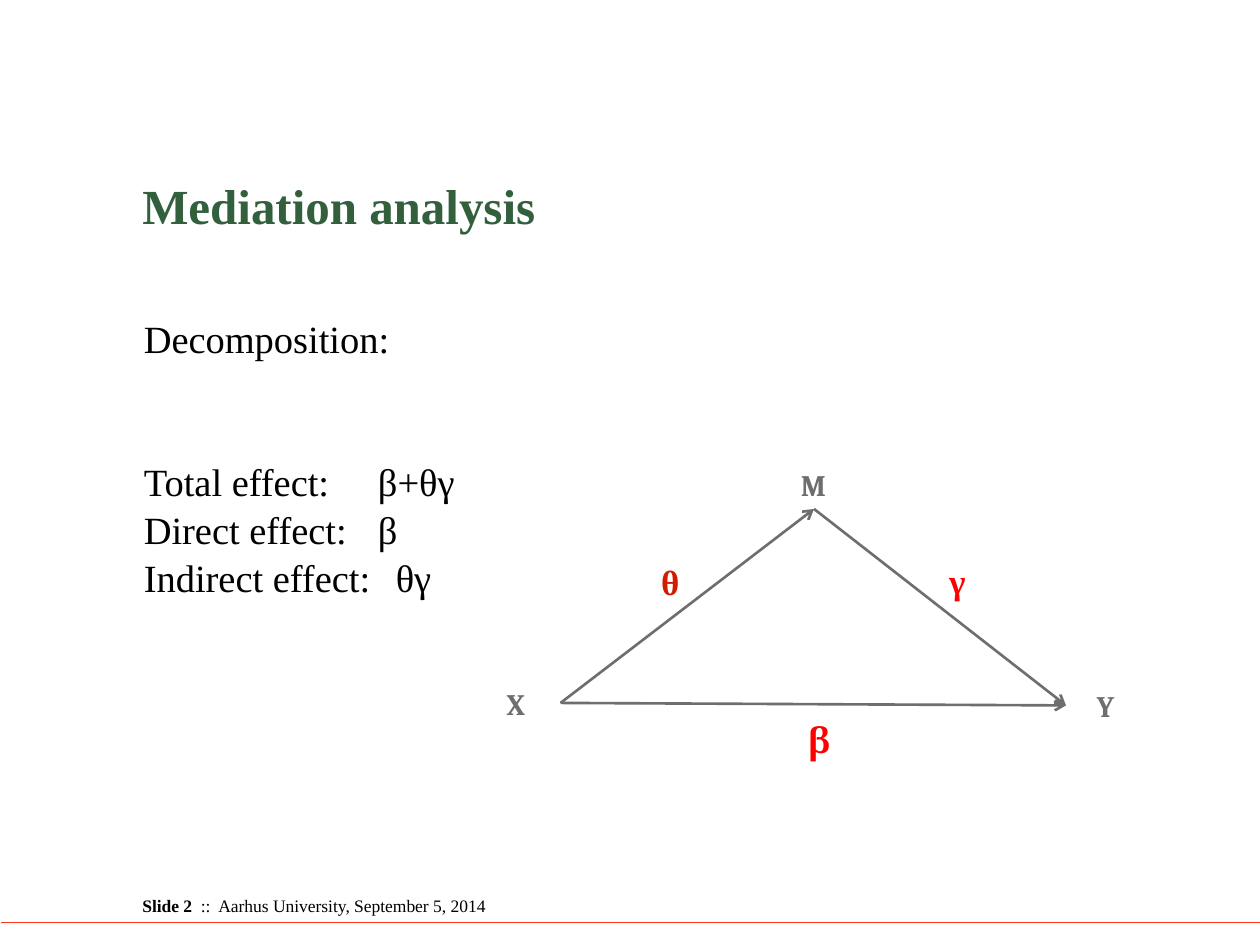
from typing import NamedTuple

from lxml.etree import SubElement
from pptx import Presentation
from pptx.dml.color import RGBColor
from pptx.enum.shapes import MSO_CONNECTOR as Link
from pptx.enum.text import MSO_ANCHOR as Anchor, PP_ALIGN as Align
from pptx.oxml.ns import qn
from pptx.util import Cm, Pt

GREEN = RGBColor(0x32, 0x60, 0x3D)
BLACK = RGBColor(0, 0, 0)
GREY = RGBColor(0x6E, 0x6E, 0x6E)
RED = RGBColor(0xFF, 0, 0)
BRICK = RGBColor(0xD1, 0x1C, 0)
CORAL = RGBColor(0xFF, 0x37, 0x18)
TIMES = "Times New Roman"
CAMBRIA = "Cambria"


class Box(NamedTuple):
    left: float
    top: float
    width: float
    height: float


class Label(NamedTuple):
    text: str
    box: Box
    size: float
    font: str
    color: RGBColor


class Arrow(NamedTuple):
    start: tuple[float, float]
    end: tuple[float, float]


# Corners of the mediation triangle
X = (11.3, 14.17)
Y = (21.49, 14.22)
M = (16.41, 10.26)

ARROWS = [Arrow(X, Y), Arrow(X, M), Arrow(M, Y)]

LABELS = [
    Label("X", Box(9.5, 13.69, 1.8, 0.98), 17, CAMBRIA, GREY),
    Label("Y", Box(21.49, 13.74, 1.6, 0.98), 17, CAMBRIA, GREY),
    Label("M", Box(14.1, 9.29, 4.6, 0.98), 17, CAMBRIA, GREY),
    Label("β", Box(14.91, 14.35, 3.2, 1.11), 20, CAMBRIA, RED),
    Label("θ", Box(11.91, 11.18, 3.2, 1.11), 20, TIMES, BRICK),
    Label("γ", Box(17.7, 11.15, 3.2, 1.11), 20, TIMES, RED),
]


def add_box(slide, box: Box, inset: bool = False):
    frame = slide.shapes.add_textbox(*map(Cm, box)).text_frame
    frame.word_wrap = True
    if not inset:
        frame.margin_left = frame.margin_right = 0
        frame.margin_top = frame.margin_bottom = 0
    return frame


def style(par, size: float, font: str, color: RGBColor, bold: bool = False) -> None:
    for run in par.runs:
        run.font.size = Pt(size)
        run.font.name = font
        run.font.color.rgb = color
        run.font.bold = bold


def add_line(slide, start, end, color: RGBColor, width: float):
    line = slide.shapes.add_connector(Link.STRAIGHT, *map(Cm, start + end))
    line.line.color.rgb = color
    line.line.width = Pt(width)
    SubElement(line._element.spPr, qn("a:effectLst"))
    return line


def add_arrow(slide, arrow: Arrow) -> None:
    line = add_line(slide, arrow.start, arrow.end, GREY, 1.5)
    SubElement(line.line._get_or_add_ln(), qn("a:tailEnd"), type="arrow")


def add_label(slide, label: Label) -> None:
    par = add_box(slide, label.box, inset=True).paragraphs[0]
    par.text = label.text
    par.alignment = Align.CENTER
    style(par, label.size, label.font, label.color, bold=True)


def add_title(slide) -> None:
    frame = add_box(slide, Box(2.87, 3.12, 18.26, 1.6))
    frame.vertical_anchor = Anchor.BOTTOM
    frame.text = "Mediation analysis"
    style(frame.paragraphs[0], 28, TIMES, GREEN, bold=True)


def add_body(slide) -> None:
    frame = add_box(slide, Box(2.9, 6.32, 18.26, 9.19))
    head = frame.paragraphs[0]
    head.text = "Decomposition:"
    effects = frame.add_paragraph()
    effects.text = "Total effect:\tβ+θγ\vDirect effect: \tβ\vIndirect effect: \tθγ"
    effects.space_before = Pt(54.3)
    for par in (head, effects):
        par.line_spacing = 1.04
        style(par, 22, TIMES, BLACK)
    # Tab stop for the formulas
    tabs = SubElement(effects._p.get_or_add_pPr(), qn("a:tabLst"))
    SubElement(tabs, qn("a:tab"), pos=str(Cm(4.72)), algn="l")


def add_footer(slide) -> None:
    par = add_box(slide, Box(2.87, 18.14, 12.83, 0.41)).paragraphs[0]
    par.text = "Slide 2 "
    par.add_run().text = " ::  Aarhus University, September 5, 2014"
    par.line_spacing = Pt(9)
    style(par, 10, TIMES, BLACK)
    par.runs[0].font.bold = True


def main() -> None:
    deck = Presentation()
    deck.slide_width, deck.slide_height = Cm(25.4), Cm(19.05)
    slide = deck.slides.add_slide(deck.slide_layouts[6])

    # Text and footer
    add_line(slide, (25.43, 18.59), (0.03, 18.59), CORAL, 0.75)
    add_title(slide)
    add_body(slide)
    add_footer(slide)

    # Path diagram
    for arrow in ARROWS:
        add_arrow(slide, arrow)
    for label in LABELS:
        add_label(slide, label)

    deck.save("out.pptx")


if __name__ == "__main__":
    main()
